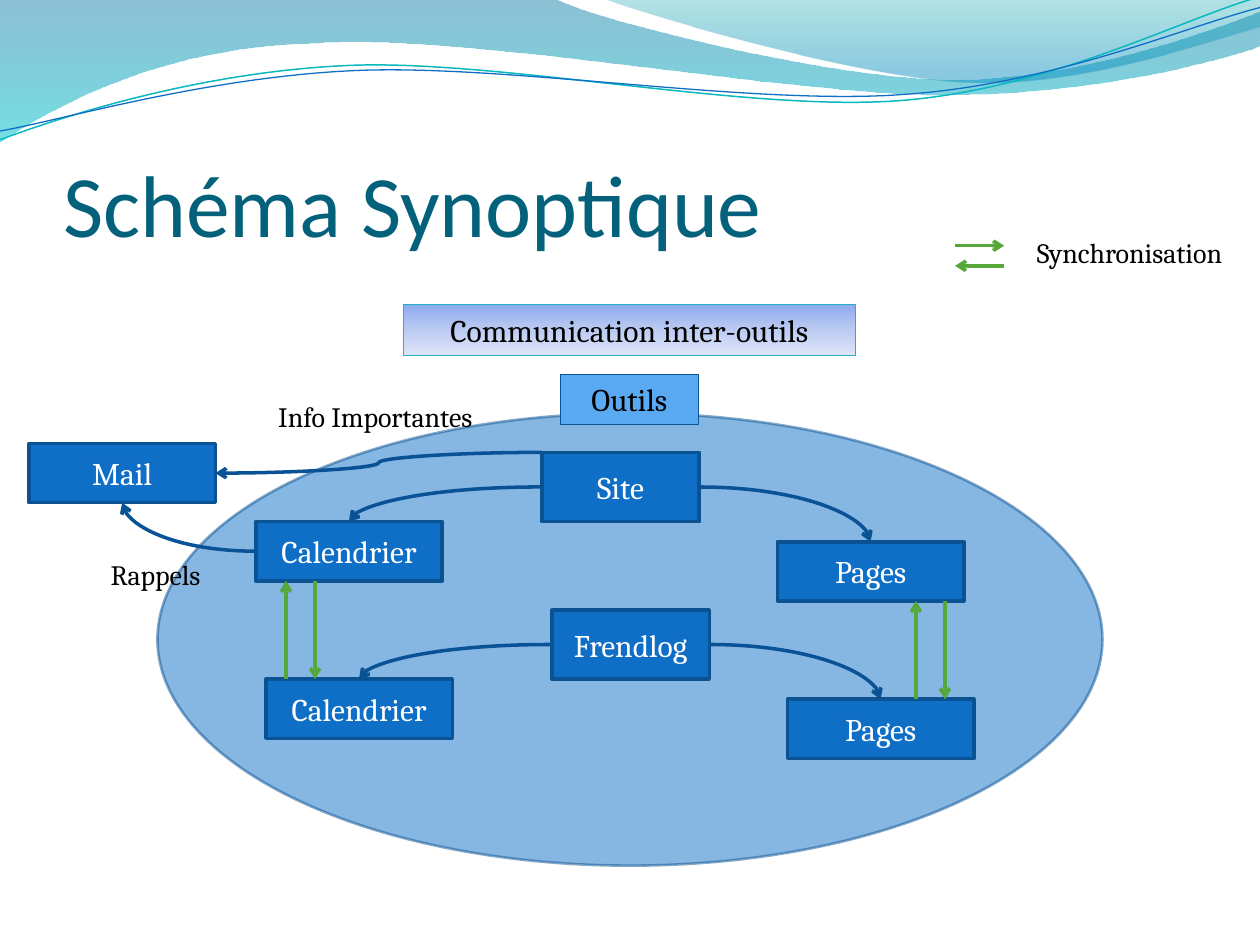
from dataclasses import dataclass
from lxml.etree import SubElement
from pptx import Presentation
from pptx.dml.color import RGBColor
from pptx.enum.shapes import MSO_CONNECTOR, MSO_SHAPE
from pptx.enum.text import MSO_ANCHOR, MSO_AUTO_SIZE, PP_ALIGN
from pptx.oxml.ns import qn
from pptx.util import Inches, Pt


@dataclass(frozen=True)
class Theme:
    head: str = "Calibri"
    body: str = "Cambria"
    title: str = "04617B"
    ink: str = "000000"
    white: str = "FFFFFF"
    blue: str = "0F6FC6"
    edge: str = "0B5292"
    link: str = "095295"
    sync: str = "55A839"
    sky: str = "59AAF2"
    rim: str = "0B5394"
    teal: str = "21B2C9"
    aqua: str = "0AB8BF"
    big: int = 50
    mid: int = 18
    small: int = 16
    banner: tuple = ((0, "8EABEE", 100), (50, "BBCBF2", 100), (100, "DEE5F8", 100))
    wave: tuple = ((0, "0074A1", 45), (100, "00C6CF", 55))
    crest: tuple = ((0, "00A1A9", 30), (80, "008BBF", 45))


T = Theme()
TOP, LEFT, BOTTOM, RIGHT = range(4)
NODE = (1.48, 0.47)
HUB = (1.25, 0.55)

WAVE = [(0, 0), (4.4, -0.01), (4.76, 0.17, 6.64, 0.63, 7.58, 0.63),
        (8.53, 0.63, 9.58, 0.26, 10, 0.09), (10.01, 0.36),
        (9.83, 0.44, 8.7, 0.76, 7.46, 0.75), (6.22, 0.75, 3.82, 0.28, 2.57, 0.34),
        (1.29, 0.36, 0.46, 0.83, -0.01, 1.13), (0, 0)]
CREST = [(4.79, -0.01), (5.09, 0.11, 6.82, 0.62, 7.69, 0.65),
         (8.56, 0.69, 9.61, 0.32, 10, 0.21), (10, 0), (4.79, -0.01)]
UPPER = [(0, 1.11), (0.48, 0.93, 1.58, 0.57, 2.77, 0.52),
         (3.95, 0.47, 5.93, 0.89, 7.13, 0.8), (8.33, 0.71, 9.38, 0.15, 9.98, -0.02)]
LOWER = [(0, 1.04), (0.47, 0.96, 1.64, 0.61, 2.83, 0.56),
         (4.03, 0.51, 5.97, 0.84, 7.17, 0.75), (8.36, 0.67, 9.41, 0.21, 10, 0.06)]


def color(code):
    return RGBColor.from_string(code)


def fade(node, value):
    SubElement(node, qn("a:alpha"), val=str(value * 1000))


def blend(shape, stops):
    shape.fill.gradient()
    shape.fill.gradient_angle = 270
    group = next(shape._element.iter(qn("a:gsLst")))
    for stop in list(group):
        group.remove(stop)
    for place, code, value in stops:
        stop = SubElement(group, qn("a:gs"), pos=str(place * 1000))
        node = SubElement(stop, qn("a:srgbClr"), val=code)
        if value < 100:
            fade(node, value)


def style(shape, fill, line, width):
    shape.shadow.inherit = False
    if fill is None:
        shape.fill.background()
    elif isinstance(fill, tuple):
        blend(shape, fill)
    else:
        shape.fill.solid()
        shape.fill.fore_color.rgb = color(fill)
    if line is None:
        shape.line.fill.background()
    else:
        shape.line.color.rgb = color(line)
        shape.line.width = Pt(width)


def write(shape, text, size, code, font=T.body, align=PP_ALIGN.LEFT):
    frame = shape.text_frame
    frame.word_wrap = True
    frame.text = text
    para = frame.paragraphs[0]
    para.alignment = align
    face = para.runs[0].font
    face.name, face.size, face.color.rgb = font, Pt(size), color(code)
    return frame


def bow(shape, segments):
    lines = iter(list(shape._element.iter(qn("a:lnTo"))))
    for seg in segments[1:]:
        first = next(lines)
        if len(seg) == 2:
            continue
        curve = first.makeelement(qn("a:cubicBezTo"))
        first.addprevious(curve)
        for line in (first, next(lines), next(lines)):
            curve.append(line[0])
            line.getparent().remove(line)


def add_wave(shapes, segments, fill=None, line=None, width=0):
    points = [(Inches(seg[i]), Inches(seg[i + 1]))
              for seg in segments for i in range(0, len(seg), 2)]
    pen = shapes.build_freeform(*points[0])
    pen.add_line_segments(points[1:], close=fill is not None)
    shape = pen.convert_to_shape()
    bow(shape, segments)
    style(shape, fill, line, width)


def add_box(shapes, text, at, size, fill=T.blue, line=T.edge, width=2, ink=T.white):
    box = shapes.add_shape(MSO_SHAPE.RECTANGLE, *map(Inches, at + size))
    style(box, fill, line, width)
    frame = write(box, text, T.mid, ink, align=PP_ALIGN.CENTER)
    frame.vertical_anchor = MSO_ANCHOR.MIDDLE
    return box


def add_head(shapes, text, at, size, fill, line, width):
    box = add_box(shapes, text, at, size, fill, line, width, T.ink)
    box.text_frame.auto_size = MSO_AUTO_SIZE.SHAPE_TO_FIT_TEXT


def add_label(shapes, text, at, width):
    box = shapes.add_textbox(*map(Inches, at + (width, 0.37)))
    frame = write(box, text, T.small, T.ink)
    frame.auto_size = MSO_AUTO_SIZE.SHAPE_TO_FIT_TEXT


def add_title(shapes, text):
    box = shapes.add_textbox(*map(Inches, (0.5, 0.77, 9.08, 1.25)))
    frame = write(box, text, T.big, T.title, T.head)
    frame.margin_left = frame.margin_right = frame.margin_bottom = 0
    frame.vertical_anchor = MSO_ANCHOR.BOTTOM


def add_oval(shapes):
    oval = shapes.add_shape(MSO_SHAPE.OVAL, *map(Inches, (1.25, 3.28, 7.5, 3.59)))
    style(oval, T.blue, T.edge, 1.5)
    for node in oval._element.spPr.iter(qn("a:srgbClr")):
        fade(node, 50)


def add_arrow(shapes, start, end, code=T.sync, kind=MSO_CONNECTOR.STRAIGHT):
    arrow = shapes.add_connector(kind, *map(Inches, start + end))
    arrow.line.color.rgb = color(code)
    arrow.line.width = Pt(2)
    props = arrow._element.spPr
    SubElement(props.find(qn("a:ln")), qn("a:tailEnd"), type="arrow")
    SubElement(props, qn("a:effectLst"))
    return arrow


def add_bend(shapes, first, side, last, goal):
    bend = add_arrow(shapes, (0, 0), (0, 0), T.link, MSO_CONNECTOR.CURVE)
    bend.begin_connect(first, side)
    bend.end_connect(last, goal)
    next(bend._element.iter(qn("a:prstGeom"))).set("prst", "curvedConnector2")


def add_tool(shapes, name, x, y):
    hub = add_box(shapes, name, (x, y), HUB)
    dates = add_box(shapes, "Calendrier", (x - 2.27, y + 0.55), NODE)
    add_bend(shapes, hub, LEFT, dates, TOP)
    pages = add_box(shapes, "Pages", (x + 1.87, y + 0.71), NODE)
    add_bend(shapes, hub, RIGHT, pages, TOP)
    return dates


def main():
    deck = Presentation()
    deck.slide_width, deck.slide_height = Inches(10), Inches(7.5)
    shapes = deck.slides.add_slide(deck.slide_layouts[6]).shapes

    add_wave(shapes, WAVE, T.wave)
    add_wave(shapes, CREST, T.crest)
    lines = shapes.add_group_shape().shapes
    add_wave(lines, UPPER, line=T.aqua, width=0.85)
    add_wave(lines, LOWER, line=T.blue, width=0.75)
    add_oval(shapes)
    add_title(shapes, "Schéma Synoptique")
    add_head(shapes, "Communication inter-outils", (3.2, 2.42), (3.59, 0.4),
             T.banner, T.teal, 0.5)
    dates = add_tool(shapes, "Site", 4.3, 3.59)
    add_head(shapes, "Outils", (4.45, 2.97), (1.09, 0.4), T.sky, T.rim, 0.25)
    add_tool(shapes, "Frendlog", 4.38, 4.84)

    for x, high, low in ((7.27, 4.77, 5.55), (2.27, 4.61, 5.39)):
        add_arrow(shapes, (x, low), (x, high))
        add_arrow(shapes, (x + 0.23, high), (x + 0.23, low))
    legend = shapes.add_group_shape().shapes
    add_arrow(legend, (7.58, 1.95), (7.97, 1.95))
    add_arrow(legend, (7.97, 2.11), (7.58, 2.11))
    add_label(shapes, "Synchronisation", (8.13, 1.82), 1.95)

    mail = add_box(shapes, "Mail", (0.23, 3.52), NODE)
    add_bend(shapes, dates, LEFT, mail, BOTTOM)
    add_label(shapes, "Rappels", (0.78, 4.38), 1.02)
    news = add_arrow(shapes, (4.3, 3.59), (1.72, 3.75), T.link, MSO_CONNECTOR.CURVE)
    news.end_connect(mail, RIGHT)
    add_label(shapes, "Info Importantes", (2.11, 3.12), 1.88)
    deck.save("out.pptx")


if __name__ == "__main__":
    main()
